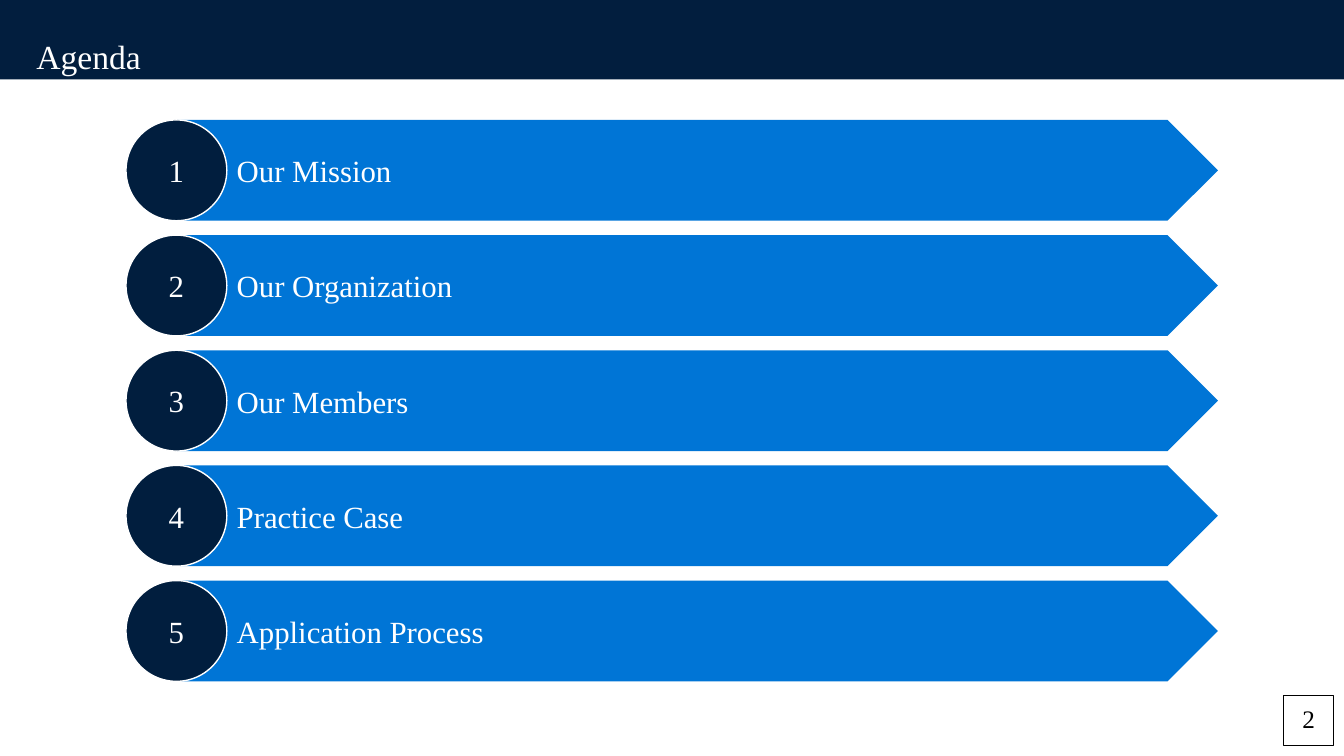
from dataclasses import dataclass

from pptx import Presentation, util as u
from pptx.dml.color import RGBColor
from pptx.enum import shapes as kinds, text


@dataclass(frozen=True)
class Theme:
    font: str = "Times New Roman"
    band: str = "021E3E"
    disc: str = "011E3E"
    arrow: str = "0075D6"
    white: str = "FFFFFF"
    black: str = "000000"
    head: int = 24
    item: int = 22
    page: int = 18


THEME = Theme()
WIDE, HIGH = 13.33, 7.5
UNIT = 1.0
LEFT, TOP, PITCH = 1.25, 1.19, 1.1425
TOPICS = ["Our Mission", "Our Organization", "Our Members",
          "Practice Case", "Application Process"]


def color(code):
    return RGBColor.from_string(code)


def write(shape, words, size, code, align=text.PP_ALIGN.LEFT,
          anchor=text.MSO_ANCHOR.MIDDLE, lead=None):
    frame = shape.text_frame
    frame.text = words
    frame.word_wrap = True
    frame.auto_size = text.MSO_AUTO_SIZE.NONE
    frame.vertical_anchor = anchor
    para = frame.paragraphs[0]
    para.alignment = align
    para.line_spacing = lead
    font = para.runs[0].font
    font.name, font.size = THEME.font, u.Pt(size)
    font.color.rgb = color(code)


def draw(parent, kind, box, fill=None, line=None, width=1):
    shape = parent.add_shape(kind, *map(u.Inches, box))
    shape.shadow.inherit = False
    if fill:
        shape.fill.solid()
        shape.fill.fore_color.rgb = color(fill)
    else:
        shape.fill.background()
    if line:
        shape.line.color.rgb = color(line)
        shape.line.width = u.Pt(width)
    else:
        shape.line.fill.background()
    return shape


def header(slide, words):
    draw(slide.shapes, kinds.MSO_SHAPE.RECTANGLE,
         (0, 0, WIDE, HIGH * 0.105), THEME.band)
    title = slide.shapes.title
    title.element.getparent().append(title.element)
    title.left, title.top = u.Inches(0.26), u.Inches(0.35)
    title.width, title.height = u.Inches(9.39), u.Inches(0.48)
    write(title, words, THEME.head, THEME.white,
          anchor=text.MSO_ANCHOR.TOP, lead=0.9)


def topic(slide, row, words):
    group = slide.shapes.add_group_shape().shapes
    top = TOP + row * PITCH
    start = LEFT + UNIT / 2
    arrow = draw(group, kinds.MSO_SHAPE.CHEVRON,
                 (start, top, WIDE - LEFT - start, UNIT), THEME.arrow)
    arrow.adjustments[0] = 0.5
    write(arrow, words, THEME.item, THEME.white)
    disc = draw(group, kinds.MSO_SHAPE.OVAL, (LEFT, top, UNIT, UNIT),
                THEME.disc, THEME.white)
    write(disc, str(row + 1), THEME.item, THEME.white, text.PP_ALIGN.CENTER)


def number(slide, words):
    side, gap = UNIT / 2, 0.1
    box = draw(slide.shapes, kinds.MSO_SHAPE.RECTANGLE,
               (WIDE - side - gap, HIGH - side - gap, side, side),
               line=THEME.black, width=0.75)
    write(box, words, THEME.page, THEME.black, text.PP_ALIGN.CENTER, lead=0.9)


def main():
    deck = Presentation()
    deck.slide_width, deck.slide_height = u.Inches(WIDE), u.Inches(HIGH)
    slide = deck.slides.add_slide(deck.slide_layouts.get_by_name("Title Only"))
    header(slide, "Agenda")
    for row, words in enumerate(TOPICS):
        topic(slide, row, words)
    number(slide, "2")
    deck.save("out.pptx")


if __name__ == "__main__":
    main()
